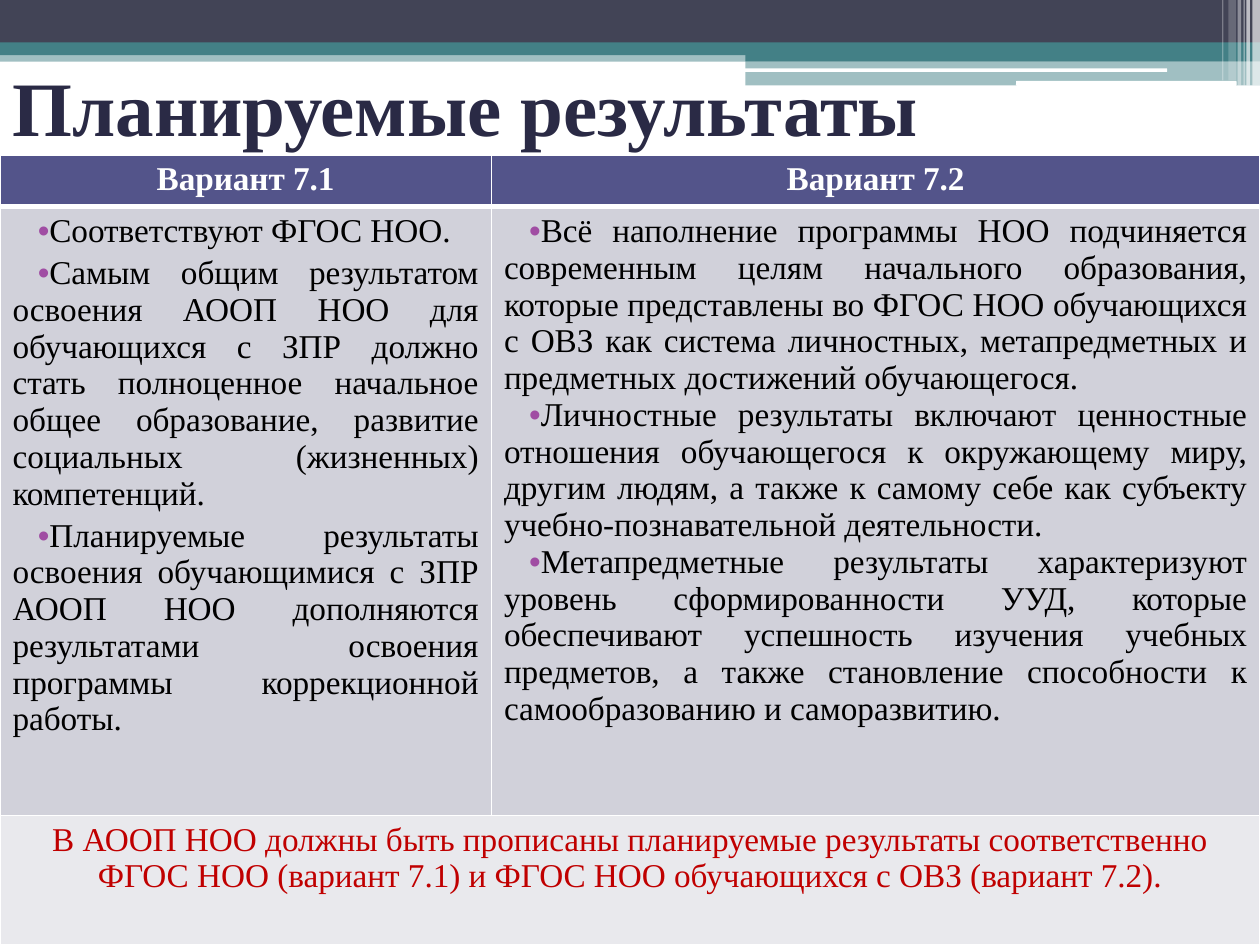
"""Build a slide that compares the planned results of two programme variants."""
from lxml import etree
from pptx import Presentation
from pptx.dml.color import RGBColor
from pptx.enum.shapes import MSO_SHAPE
from pptx.enum.text import MSO_ANCHOR, PP_ALIGN
from pptx.oxml.ns import qn
from pptx.util import Pt

RECT, ROUND = MSO_SHAPE.RECTANGLE, MSO_SHAPE.ROUNDED_RECTANGLE
LEFT, MID, FULL = PP_ALIGN.LEFT, PP_ALIGN.CENTER, PP_ALIGN.JUSTIFY
WHITE = RGBColor(0xFF, 0xFF, 0xFF)
BLACK = RGBColor(0, 0, 0)
SLATE = RGBColor(0x42, 0x44, 0x56)
TEAL = RGBColor(0x43, 0x80, 0x86)
NAVY = RGBColor(0x2A, 0x2A, 0x45)
INDIGO = RGBColor(0x53, 0x54, 0x8A)
GREY = RGBColor(0xD1, 0xD1, 0xDA)
PALE = RGBColor(0xE9, 0xE9, 0xED)
PURPLE = RGBColor(0xA0, 0x4D, 0xA3)
RED = RGBColor(0xC0, 0, 0)


def add_node(root, tag, **attrs):
    return etree.SubElement(root, qn(tag), attrs)


def write(frame, *texts, size=19, color=BLACK, bold=False, align=MID, gap=0, dots=False):
    for i, text in enumerate(texts):
        para = frame.add_paragraph() if i else frame.paragraphs[0]
        para.alignment = align
        para.space_before = Pt(gap if i else 0)
        run = para.add_run()
        run.text = text
        font = run.font
        font.name, font.size, font.bold = "Times New Roman", Pt(size), bold
        font.color.rgb = color
        if dots:
            props = para._p.get_or_add_pPr()
            props.set("marL", "0")
            props.set("indent", str(Pt(14.4)))
            tint = add_node(props, "a:buClr")
            add_node(tint, "a:srgbClr", val=str(PURPLE))
            add_node(props, "a:buFont", typeface="Arial")
            add_node(props, "a:buChar", char="•")


deck = Presentation()
deck.slide_width, deck.slide_height = Pt(720), Pt(540)
slide = deck.slides.add_slide(deck.slide_layouts[5])

bars = [
    (RECT, 0, 28.8, 720, 6.5, TEAL, 50),
    (RECT, 0, 0, 720, 24.5, SLATE, 100),
    (RECT, 0, 24.3, 720, 7.2, TEAL, 100),
    (RECT, 426, 28, 294, 7, TEAL, 100),
    (RECT, 426, 34.8, 294, 14, TEAL, 50),
    (ROUND, 425.6, 39.1, 241.4, 2, WHITE, 100),
    (ROUND, 580.6, 46.2, 126, 2.8, WHITE, 100),
    (RECT, 715.6, 0, 4.4, 49, WHITE, 65),
    (RECT, 712.2, 0, 2, 49, WHITE, 65),
    (RECT, 710.6, 0, 0.7, 49, WHITE, 60),
    (RECT, 707.2, 0, 2, 49, WHITE, 40),
    (RECT, 702, 0, 4.3, 46, WHITE, 20),
    (RECT, 698.4, 0, 0.7, 46, WHITE, 30),
]
for kind, x, y, wide, high, color, alpha in bars:
    bar = slide.shapes.add_shape(kind, Pt(x), Pt(y), Pt(wide), Pt(high))
    bar.shadow.inherit = False
    bar.line.fill.background()
    bar.fill.solid()
    bar.fill.fore_color.rgb = color
    if alpha < 100:
        tint = bar._element.spPr.find(".//" + qn("a:srgbClr"))
        add_node(tint, "a:alpha", val=str(alpha * 1000))

title = slide.shapes.title
title.left, title.top, title.width, title.height = Pt(0), Pt(9.4), Pt(720), Pt(101.5)
title.text_frame.vertical_anchor = MSO_ANCHOR.MIDDLE
write(title.text_frame, "Планируемые результаты", size=44, color=NAVY, bold=True, align=LEFT)

widths, heights = [280.8, 439.2], [29.5, 347.8, 74.2]
table = slide.shapes.add_table(3, 2, Pt(0), Pt(88.6), Pt(sum(widths)), Pt(sum(heights))).table
for col, wide in zip(table.columns, widths):
    col.width = Pt(wide)
for row, high in zip(table.rows, heights):
    row.height = Pt(high)
table.cell(2, 0).merge(table.cell(2, 1))

for i, fill in enumerate([INDIGO, GREY, PALE]):
    for cell in table.rows[i].cells:
        props = cell._tc.get_or_add_tcPr()
        for side in "LRTB":
            thick = 3 if (i, side) in [(0, "B"), (1, "T")] else 1
            edge = add_node(props, "a:ln" + side, w=str(Pt(thick)))
            paint = add_node(edge, "a:solidFill")
            add_node(paint, "a:srgbClr", val=str(WHITE))
        cell.fill.solid()
        cell.fill.fore_color.rgb = fill

first = [
    "Соответствуют ФГОС НОО.",
    "Самым общим результатом освоения АООП НОО для обучающихся с ЗПР должно стать "
    "полноценное начальное общее образование, развитие социальных (жизненных) компетенций.",
    "Планируемые результаты освоения обучающимися с ЗПР АООП НОО дополняются "
    "результатами освоения программы коррекционной работы.",
]
second = [
    "Всё наполнение программы НОО подчиняется современным целям начального образования, "
    "которые представлены во ФГОС НОО обучающихся с ОВЗ как система личностных, "
    "метапредметных и предметных достижений обучающегося.",
    "Личностные результаты включают ценностные отношения обучающегося к окружающему миру, "
    "другим людям, а также к самому себе как субъекту учебно-познавательной деятельности.",
    "Метапредметные результаты характеризуют уровень сформированности УУД, которые "
    "обеспечивают успешность изучения учебных предметов, а также становление способности "
    "к самообразованию и саморазвитию.",
]
columns = [("Вариант 7.1", first, 3), ("Вариант 7.2", second, 0)]
for i, (head, items, gap) in enumerate(columns):
    write(table.cell(0, i).text_frame, head, color=WHITE, bold=True)
    write(table.cell(1, i).text_frame, *items, align=FULL, gap=gap, dots=True)
write(
    table.cell(2, 0).text_frame,
    "В АООП НОО должны быть прописаны планируемые результаты соответственно "
    "ФГОС НОО (вариант 7.1) и ФГОС НОО обучающихся с ОВЗ (вариант 7.2).",
    color=RED,
)

deck.save("out.pptx")
